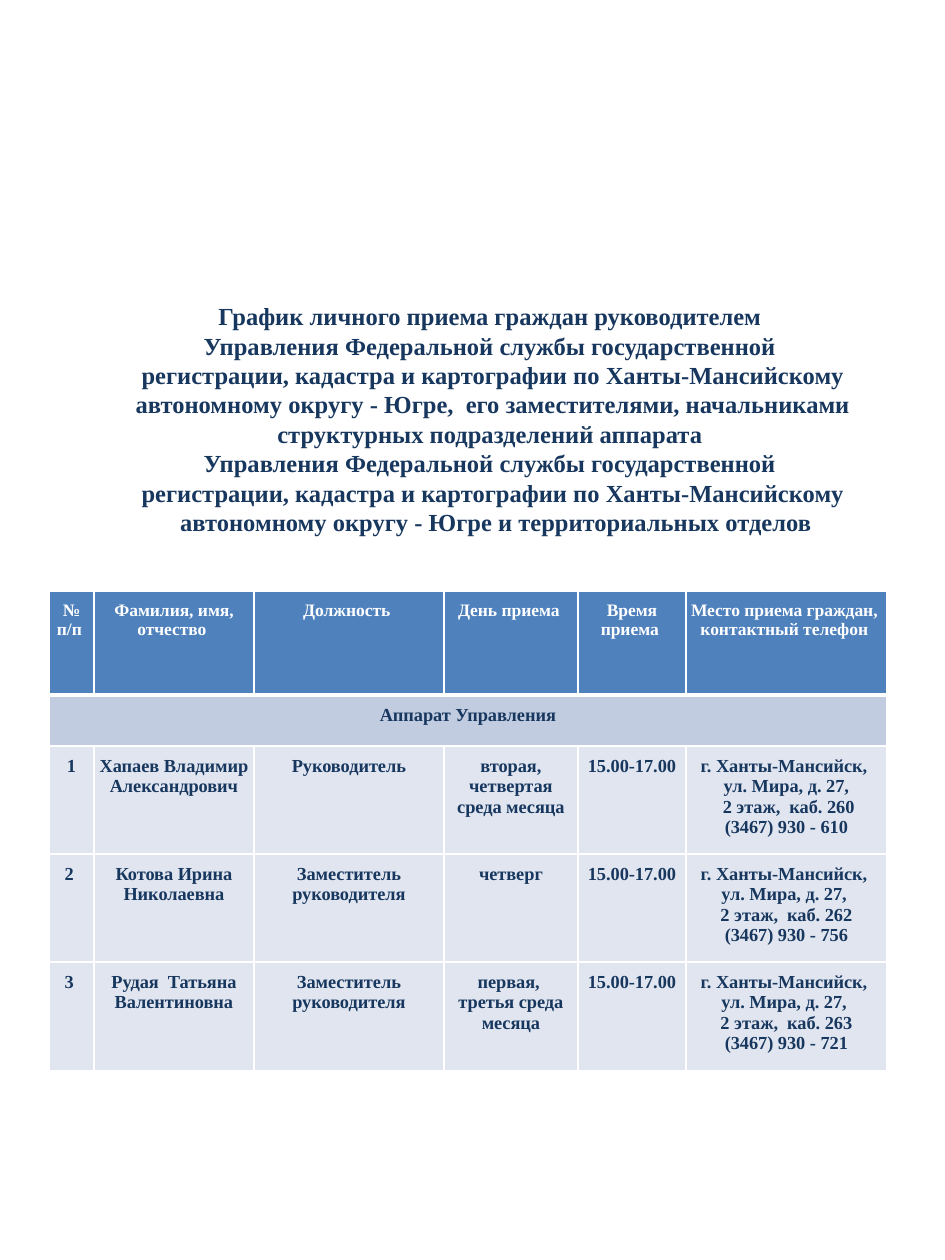
from lxml.etree import SubElement
from pptx import Presentation
from pptx.dml.color import RGBColor
from pptx.enum.text import PP_ALIGN as Align
from pptx.oxml.ns import qn
from pptx.util import Pt

NAVY, WHITE = "17375E", "FFFFFF"
HEADER_FILL, SECTION_FILL, BODY_FILL = "4F81BD", "C1CCE1", "E0E5F0"
COLUMNS = [45, 160, 190, 134, 108, 201]
ROW_HEIGHTS = [104, 51, 108, 108, 108]
TITLE = [
    "График личного приема граждан руководителем ",
    "Управления Федеральной службы государственной ",
    "регистрации, кадастра и картографии по Ханты-Мансийскому автономному округу - Югре,  "
    "его заместителями, начальниками структурных подразделений аппарата \v"
    "Управления Федеральной службы государственной ",
    "регистрации, кадастра и картографии по Ханты-Мансийскому",
    " автономному округу - Югре и территориальных отделов",
]
HEADER = ["№ п/п ", "Фамилия, имя, отчество ", "Должность ", "День приема ", "Время приема ",
          "Место приема граждан, \nконтактный телефон "]
HOURS = "15.00-17.00"
CITY = "г. Ханты-Мансийск, "
PEOPLE = [
    ["1", "Хапаев Владимир Александрович", "Руководитель", "вторая, четвертая среда месяца", HOURS,
     f"{CITY}\nул. Мира, д. 27,\n 2 этаж,  каб. 260\n(3467) 930 - 610"],
    ["2 ", "Котова Ирина Николаевна", "Заместитель руководителя", "четверг", HOURS,
     f"{CITY}\nул. Мира, д. 27, \n2 этаж,  каб. 262\n(3467) 930 - 756"],
    ["3 ", "Рудая  Татьяна Валентиновна", "Заместитель руководителя", "первая, \nтретья среда месяца", HOURS,
     f"{CITY}\nул. Мира, д. 27, \n2 этаж,  каб. 263\n(3467) 930 - 721"],
]


def px(length):
    return round(length * 914400 / 126)


def color(value):
    return RGBColor.from_string(value)


class Page:
    """Holds the text style and the current slide."""

    font_name = "Times New Roman"

    def __init__(self, slide):
        self.slide = slide

    def set_text(self, frame, text, size, ink):
        frame.text = text
        for paragraph in frame.paragraphs:
            paragraph.alignment = Align.CENTER
            font = paragraph.font
            font.name, font.size, font.bold = self.font_name, Pt(size), True
            font.color.rgb = color(ink)

    def text_box(self, left, top, width, height, lines, size):
        frame = self.slide.shapes.add_textbox(px(left), px(top), px(width), px(height)).text_frame
        frame.word_wrap = True
        self.set_text(frame, "\n".join(lines), size, NAVY)

    def border(self, cell, side, width):
        line = SubElement(cell._tc.get_or_add_tcPr(), qn(f"a:ln{side}"), w=str(Pt(width)))
        SubElement(SubElement(line, qn("a:solidFill")), qn("a:srgbClr"), val=WHITE)

    def cell(self, cell, text, size, ink, fill, top=1, bottom=1):
        cell.margin_left = cell.margin_right = px(2)
        cell.margin_top = cell.margin_bottom = px(10)
        for side, width in zip("LRTB", (1, 1, top, bottom)):
            self.border(cell, side, width)
        cell.fill.solid()
        cell.fill.fore_color.rgb = color(fill)
        self.set_text(cell.text_frame, text, size, ink)

    def table(self, left, top, columns, heights):
        table = self.slide.shapes.add_table(
            len(heights), len(columns), px(left), px(top), px(sum(columns)), px(sum(heights))).table
        for column, width in zip(table.columns, columns):
            column.width = px(width)
        for row, height in zip(table.rows, heights):
            row.height = px(height)
        return table


def main():
    presentation = Presentation()
    presentation.slide_width, presentation.slide_height = px(945), px(1260)
    page = Page(presentation.slides.add_slide(presentation.slide_layouts[6]))
    page.text_box(86, 295, 814, 276, TITLE, 14)

    table = page.table(49, 591, COLUMNS, ROW_HEIGHTS)
    for index, text in enumerate(HEADER):
        page.cell(table.cell(0, index), text, 10, WHITE, HEADER_FILL, bottom=3)
    section = table.cell(1, 0)
    section.merge(table.cell(1, len(COLUMNS) - 1))
    page.cell(section, "Аппарат Управления", 10.5, NAVY, SECTION_FILL, top=3)
    for number, person in enumerate(PEOPLE, 2):
        for index, text in enumerate(person):
            page.cell(table.cell(number, index), text, 10.5, NAVY, BODY_FILL)
    presentation.save("out.pptx")


if __name__ == "__main__":
    main()
